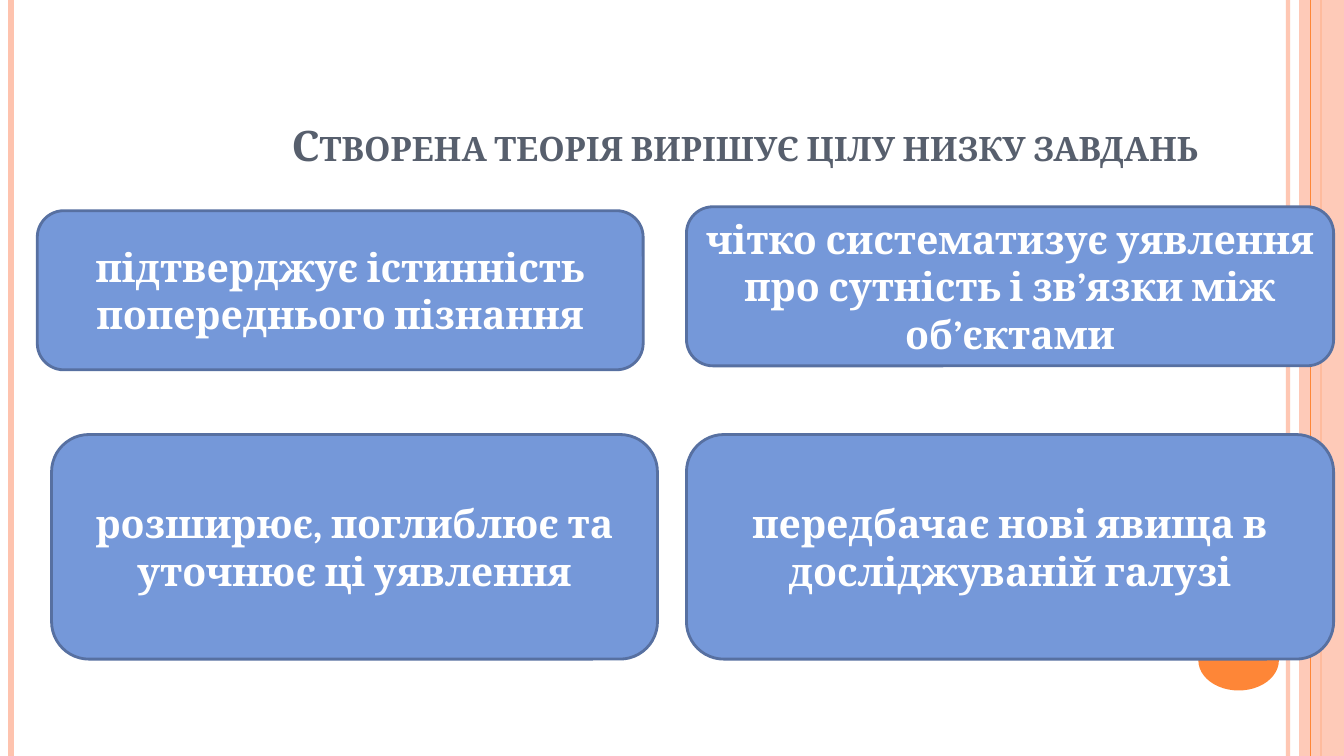
from dataclasses import dataclass

from lxml.etree import SubElement
from pptx import Presentation
from pptx.dml.color import RGBColor
from pptx.enum.shapes import MSO_CONNECTOR as Connector, MSO_SHAPE as ShapeKind
from pptx.enum.text import MSO_ANCHOR as Anchor, MSO_AUTO_SIZE as AutoSize, PP_ALIGN as Align
from pptx.oxml.ns import qn
from pptx.util import Cm, Pt


@dataclass(frozen=True)
class Theme:
    font: str = "Cambria"
    title_size: float = 30
    body_size: float = 28
    title: str = "575F6D"
    body: str = "FFFFFF"
    peach: str = "FEC3AE"
    orange: str = "FE8637"
    box_fill: str = "7598D9"
    box_line: str = "5770A1"


@dataclass(frozen=True)
class Stripe:
    x: float
    color: str
    width: float
    opacity: int = 100


@dataclass(frozen=True)
class Block:
    kind: ShapeKind
    left: float
    top: float
    width: float
    height: float
    fill: str
    line: str | None = None
    opacity: int = 100
    text: str = ""


THEME = Theme()
SLIDE_WIDTH, SLIDE_HEIGHT = 33.87, 19.05
RIGHT_LEFT, RIGHT_WIDTH, LEFT_WIDTH = 17.3, 16.31, 15.27
UPPER_HEIGHT, LOWER_TOP, LOWER_HEIGHT = 4.01, 10.95, 5.66


def set_fill(fill, color: str, opacity: int = 100) -> None:
    fill.solid()
    fill.fore_color.rgb = RGBColor.from_string(color)
    if opacity < 100:
        # The colour element is the only child of the solid fill
        color_element = next(fill._xPr.iter(qn("a:srgbClr")))
        SubElement(color_element, qn("a:alpha"), val=str(opacity * 1000))


def write_text(shape, text: str, *, size: float, color: str, anchor: Anchor,
               small_caps: bool = False) -> None:
    frame = shape.text_frame
    frame.word_wrap = True
    frame.auto_size = AutoSize.NONE
    frame.vertical_anchor = anchor
    paragraph = frame.paragraphs[0]
    paragraph.alignment = Align.CENTER
    run = paragraph.add_run()
    run.text = text
    run.font.name = THEME.font
    run.font.size = Pt(size)
    run.font.bold = True
    run.font.color.rgb = RGBColor.from_string(color)
    if small_caps:
        run.font._element.set("cap", "small")


def draw_stripe(slide, stripe: Stripe) -> None:
    x = Cm(stripe.x)
    line = slide.shapes.add_connector(Connector.STRAIGHT, x, 0, x, Cm(SLIDE_HEIGHT))
    line.line.width = Pt(stripe.width)
    set_fill(line.line.fill, stripe.color, stripe.opacity)
    SubElement(line._element.spPr, qn("a:effectLst"))


def draw_block(slide, block: Block) -> None:
    shape = slide.shapes.add_shape(block.kind, Cm(block.left), Cm(block.top),
                                   Cm(block.width), Cm(block.height))
    shape.shadow.inherit = False
    set_fill(shape.fill, block.fill, block.opacity)
    if block.line:
        shape.line.width = Pt(2)
        set_fill(shape.line.fill, block.line)
    else:
        shape.line.fill.background()
    if block.text:
        write_text(shape, block.text, size=THEME.body_size, color=THEME.body,
                   anchor=Anchor.MIDDLE)


def task_box(left: float, top: float, width: float, height: float, text: str) -> Block:
    return Block(ShapeKind.ROUNDED_RECTANGLE, left, top, width, height,
                 THEME.box_fill, THEME.box_line, text=text)


BACK_STRIPES = [
    Stripe(32.46, THEME.peach, 3, 93),
    Stripe(0.28, THEME.peach, 4.5),
    Stripe(33.3, THEME.orange, 1.5),
]
SIDE_BAND = Block(ShapeKind.RECTANGLE, 32.74, 0, 1.13, SLIDE_HEIGHT, THEME.peach, opacity=87)
FRONT_STRIPE = Stripe(33.02, THEME.orange, 0.75)
ORANGE_DISC = Block(ShapeKind.OVAL, 30.2, 15.88, 2.03, 1.52, THEME.orange)
TASKS = [
    task_box(0.94, 5.31, LEFT_WIDTH, UPPER_HEIGHT,
             "підтверджує істинність попереднього пізнання"),
    task_box(RIGHT_LEFT, 5.21, RIGHT_WIDTH, UPPER_HEIGHT,
             "чітко систематизує уявлення про сутність і зв’язки між об’єктами"),
    task_box(1.3, LOWER_TOP, LEFT_WIDTH, LOWER_HEIGHT,
             "розширює, поглиблює та уточнює ці уявлення"),
    task_box(RIGHT_LEFT, LOWER_TOP, RIGHT_WIDTH, LOWER_HEIGHT,
             "передбачає нові явища в досліджуваній галузі"),
]


def main() -> None:
    presentation = Presentation()
    presentation.slide_width, presentation.slide_height = Cm(SLIDE_WIDTH), Cm(SLIDE_HEIGHT)
    slide = presentation.slides.add_slide(presentation.slide_layouts[5])

    # Title
    title = slide.shapes.title
    title.left, title.top, title.width, title.height = Cm(3.68), Cm(1.73), Cm(30.19), Cm(2.69)
    write_text(title, "Створена теорія вирішує цілу низку завдань", size=THEME.title_size,
               color=THEME.title, anchor=Anchor.BOTTOM, small_caps=True)

    # Side decoration, from back to front
    for stripe in BACK_STRIPES:
        draw_stripe(slide, stripe)
    draw_block(slide, SIDE_BAND)
    draw_stripe(slide, FRONT_STRIPE)
    draw_block(slide, ORANGE_DISC)

    # Four tasks of the theory
    for task in TASKS:
        draw_block(slide, task)

    presentation.save("out.pptx")


if __name__ == "__main__":
    main()
